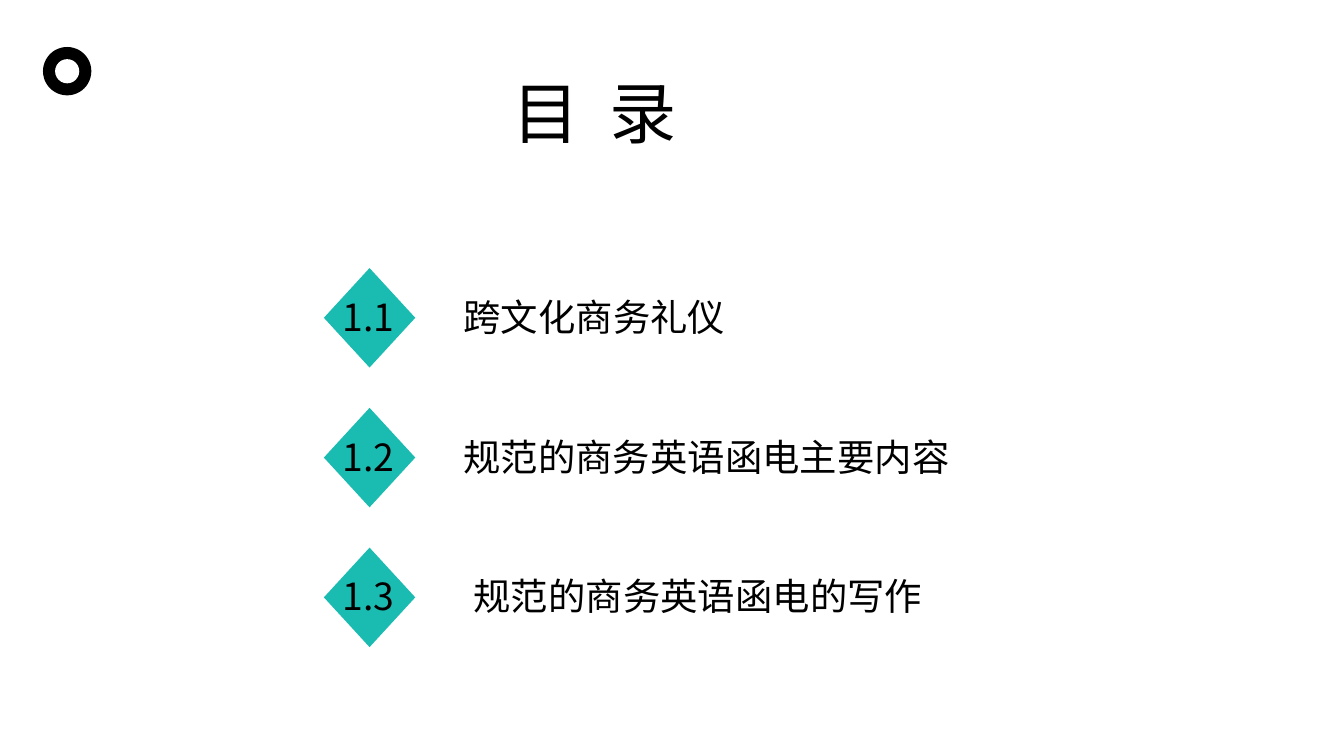
from dataclasses import dataclass

from lxml import etree
from pptx import Presentation
from pptx.dml.color import RGBColor
from pptx.enum.shapes import MSO_SHAPE
from pptx.enum.text import MSO_ANCHOR
from pptx.oxml.ns import qn
from pptx.util import Pt

ELLIPSE, DIAMOND = MSO_SHAPE.OVAL, MSO_SHAPE.DIAMOND
MIDDLE = MSO_ANCHOR.MIDDLE
EMU_PER_PX = 4572  # 200 px to the inch
BLANK_LAYOUT = 6


@dataclass(frozen=True)
class Theme:
    ink: RGBColor = RGBColor(0x00, 0x00, 0x00)
    paper: RGBColor = RGBColor(0xFF, 0xFF, 0xFF)
    accent: RGBColor = RGBColor(0x1A, 0xBB, 0xB1)
    font: str = "Noto Sans CJK SC"
    title_size: int = 36
    item_size: int = 20


def px(*lengths):
    return [length * EMU_PER_PX for length in lengths]


class SlideBuilder:
    def __init__(self, slide, theme):
        self.slide = slide
        self.theme = theme

    def background(self, color):
        fill = self.slide.background.fill
        fill.solid()
        fill.fore_color.rgb = color

    def shape(self, kind, left, top, width, height, color):
        shape = self.slide.shapes.add_shape(kind, *px(left, top, width, height))
        shape.shadow.inherit = False
        shape.fill.solid()
        shape.fill.fore_color.rgb = color
        shape.line.fill.background()

    def text(self, words, left, top, width, height, size, tracking=0):
        """Add one vertically centred line; tracking is in points."""
        box = self.slide.shapes.add_textbox(*px(left, top, width, height))
        frame = box.text_frame
        frame.word_wrap = True
        frame.vertical_anchor = MIDDLE
        para = frame.paragraphs[0]
        span = para.add_run()
        span.text = words
        font = para.font
        font.size = Pt(size)
        font.color.rgb = self.theme.ink
        font.name = self.theme.font
        east_asian = etree.SubElement(font._element, qn("a:ea"))
        east_asian.set("typeface", self.theme.font)
        if tracking:
            span.font._element.set("spc", str(tracking * 100))

    def ring(self, left, top, diameter, thickness):
        hole = diameter - 2 * thickness
        self.shape(ELLIPSE, left, top, diameter, diameter, self.theme.ink)
        self.shape(ELLIPSE, left + thickness, top + thickness, hole, hole,
                   self.theme.paper)

    def contents_item(self, number, words, top, left, width):
        size = self.theme.item_size
        text_top, text_height = top + 28, 88
        self.shape(DIAMOND, 482, top, 136, 148, self.theme.accent)
        self.text(number, 490, text_top, 126, text_height, size)
        self.text(words, left, text_top, width, text_height, size)


def main():
    theme = Theme()
    deck = Presentation()
    deck.slide_width, deck.slide_height = px(2000, 1125)
    page = deck.slides.add_slide(deck.slide_layouts[BLANK_LAYOUT])
    builder = SlideBuilder(page, theme)

    builder.background(theme.paper)
    builder.ring(64, 70, 72, 18)
    builder.text("目 录", 743, 95, 410, 142, theme.title_size, tracking=4)

    items = [
        ("跨文化商务礼仪", 670, 696),
        ("规范的商务英语函电主要内容", 670, 772),
        ("规范的商务英语函电的写作", 685, 768),
    ]
    first_top, pitch = 399, 208
    for index, (words, left, width) in enumerate(items):
        builder.contents_item(f"1.{index + 1}", words,
                              first_top + index * pitch, left, width)

    deck.save("out.pptx")


if __name__ == "__main__":
    main()
